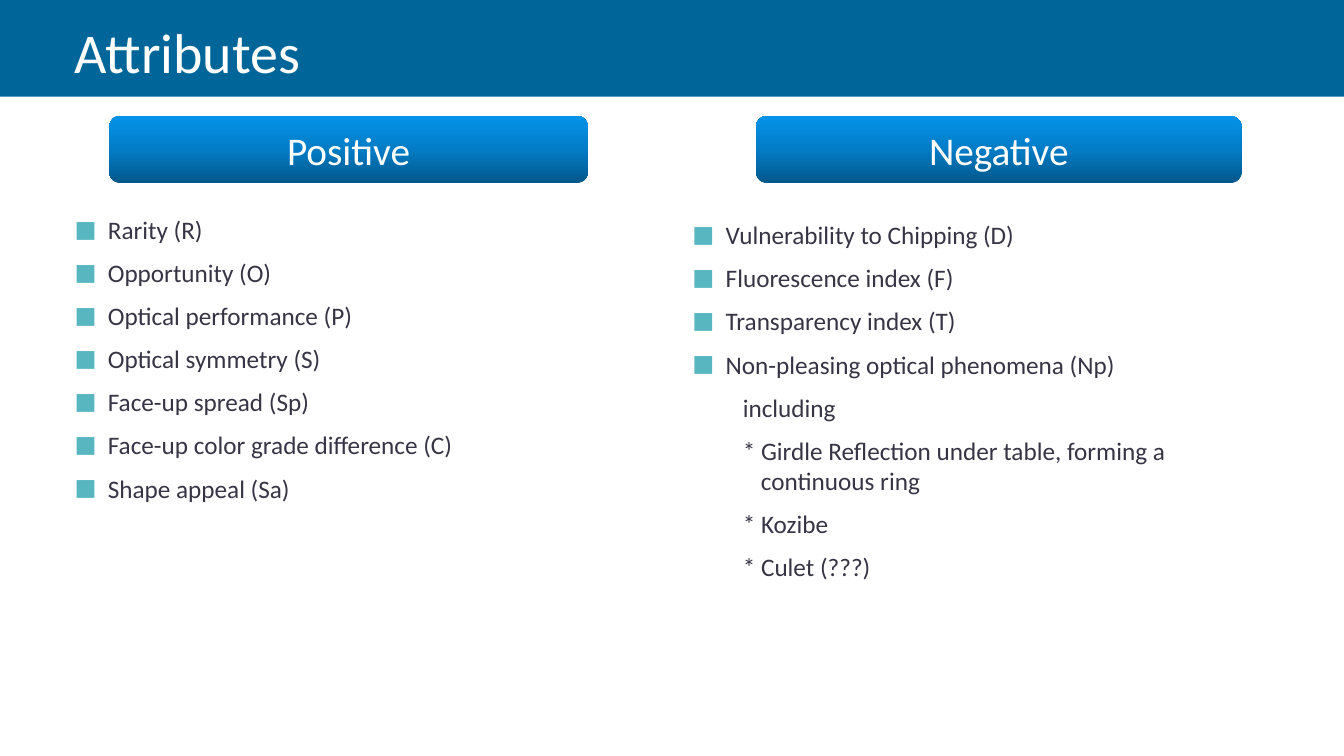
import copy

import pptx
import pptx.dml.color
import pptx.enum.shapes
import pptx.enum.text
import pptx.oxml
import pptx.oxml.ns
import pptx.util

COLS, ROWS = 160, 90
SHAPES = pptx.enum.shapes.MSO_SHAPE
ALIGN = pptx.enum.text.PP_ALIGN
MIDDLE = pptx.enum.text.MSO_ANCHOR.MIDDLE

POSITIVE = ["Rarity (R)", "Opportunity (O)", "Optical performance (P)",
            "Optical symmetry (S)", "Face-up spread (Sp)",
            "Face-up color grade difference (C)", "Shape appeal (Sa)"]
NEGATIVE = ["Vulnerability to Chipping (D)", "Fluorescence index (F)",
            "Transparency index (T)", "Non-pleasing optical phenomena (Np)"]
PHENOMENA = ["including",
             "* Girdle Reflection under table, forming a\vcontinuous ring",
             "* Kozibe", "* Culet (???)"]


def rgb(value):
    return pptx.dml.color.RGBColor.from_string(value)


def write(p, text, size=18, color="373545", font="Calibri", align=ALIGN.LEFT):
    """Fill a paragraph; a vertical tab in the text is a line break."""
    p.alignment = align
    for i, line in enumerate(text.split("\v")):
        if i:
            p.add_line_break()
        r = p.add_run()
        r.text = line
        r.font.size = pptx.util.Pt(size)
        r.font.name = font
        r.font.color.rgb = rgb(color)


def indent(p, left, first):
    pPr = p._p.get_or_add_pPr()
    pPr.set("marL", str(pptx.util.Inches(left)))
    pPr.set("indent", str(pptx.util.Inches(first)))
    return pPr


def add_bullet(pPr, color="58B6C0", percent=92, char="■"):
    ns = pptx.oxml.ns.nsdecls("a")
    for xml in (f'<a:buClr {ns}><a:srgbClr val="{color}"/></a:buClr>',
                f'<a:buSzPct {ns} val="{percent * 1000}"/>',
                f'<a:buFont {ns} typeface="Calibri"/>',
                f'<a:buChar {ns} char="{char}"/>'):
        pPr.append(pptx.oxml.parse_xml(xml))


class Deck:
    """Places elements on a grid of COLS by ROWS cells."""

    banner = "006699"
    gradient = ["02578B", "037CC5", "0493EA"]

    def __init__(self):
        self.prs = pptx.Presentation()
        self.prs.slide_width = pptx.util.Inches(13.33)
        self.prs.slide_height = pptx.util.Inches(7.5)
        self.s = self.prs.slides.add_slide(self.prs.slide_layouts[6])

    def cells(self, col, row, cols, rows):
        w, h = self.prs.slide_width / COLS, self.prs.slide_height / ROWS
        return [round(v) for v in (col * w, row * h, cols * w, rows * h)]

    def shape(self, kind, *box):
        sp = self.s.shapes.add_shape(kind, *self.cells(*box))
        sp.shadow.inherit = False
        sp.line.fill.background()
        return sp

    def band(self, *box):
        sp = self.shape(SHAPES.RECTANGLE, *box)
        sp.fill.solid()
        sp.fill.fore_color.rgb = rgb(self.banner)

    def button(self, text, *box):
        sp = self.shape(SHAPES.ROUNDED_RECTANGLE, *box)
        sp.fill.gradient()
        sp.fill.gradient_angle = 90
        first = sp.fill.gradient_stops[0]._gs
        first.addnext(copy.deepcopy(first))
        for i, (stop, color) in enumerate(zip(sp.fill.gradient_stops, self.gradient)):
            stop.position = i / 2
            stop.color.rgb = rgb(color)
        sp.text_frame.vertical_anchor = MIDDLE
        write(sp.text_frame.paragraphs[0], text, size=28, color="FFFFFF",
              align=ALIGN.CENTER)

    def text_box(self, *box):
        tf = self.s.shapes.add_textbox(*self.cells(*box)).text_frame
        tf.word_wrap = True
        tf.vertical_anchor = MIDDLE
        return tf

    def title(self, text, *box):
        write(self.text_box(*box).paragraphs[0], text, size=40, color="FFFFFF")

    def bullets(self, items, details, *box):
        """Bulleted items, then indented details without bullets."""
        tf = self.text_box(*box)
        for i, text in enumerate(items + details):
            p = tf.add_paragraph() if i else tf.paragraphs[0]
            p.space_before = pptx.util.Pt(3.2)
            p.space_after = pptx.util.Pt(6)
            if i < len(items):
                add_bullet(indent(p, 0.33, -0.33))
            elif text.startswith("*"):
                indent(p, 0.68, -0.18)
            else:
                indent(p, 0.5, 0)
            write(p, text)


def main():
    deck = Deck()
    deck.band(0, 0, COLS, 11.5)
    deck.title("Attributes", 7.7, 0.7, 144.7, 10.8)
    deck.bullets(POSITIVE, [], 7.7, 22.4, 71.2, 40.6)
    deck.bullets(NEGATIVE, PHENOMENA, 81.25, 22.4, 71.2, 50.6)
    deck.button("Positive", 13, 13.8, 57, 8)
    deck.button("Negative", 90, 13.8, 57.8, 8)
    deck.prs.save("out.pptx")


if __name__ == "__main__":
    main()
